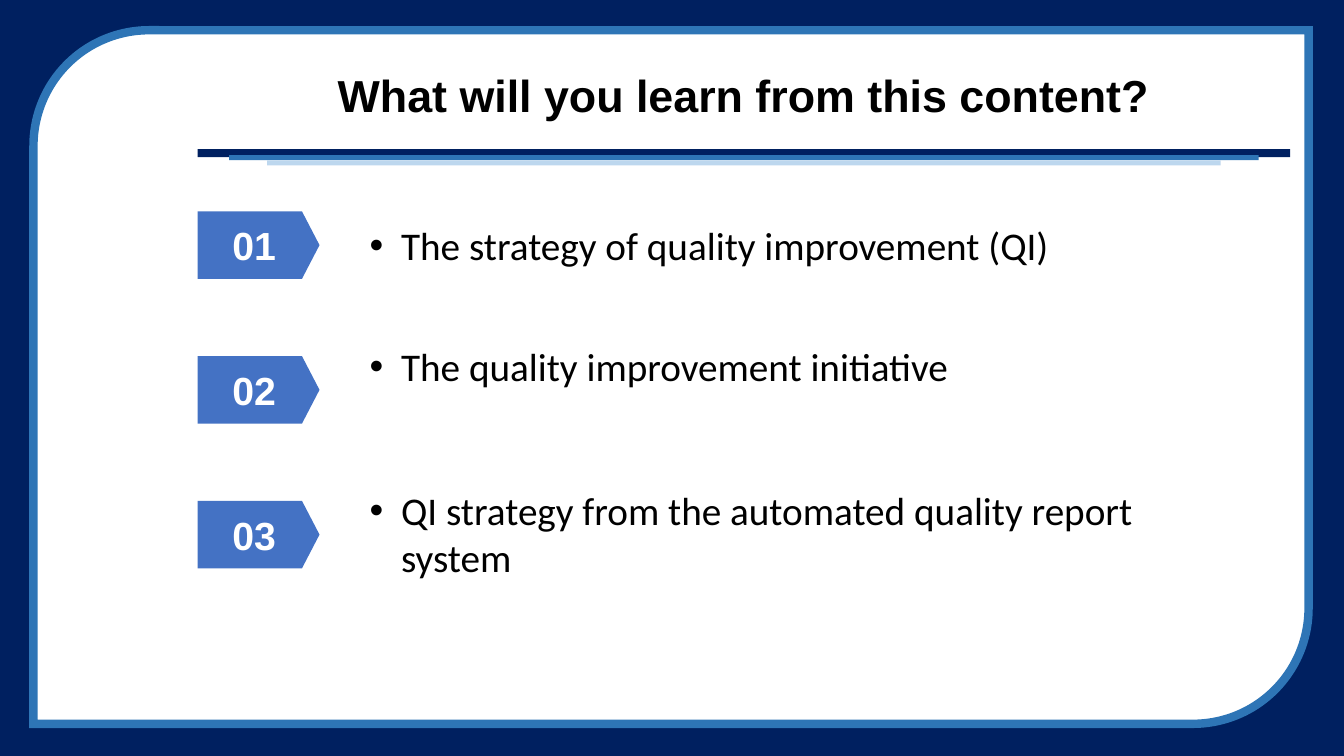
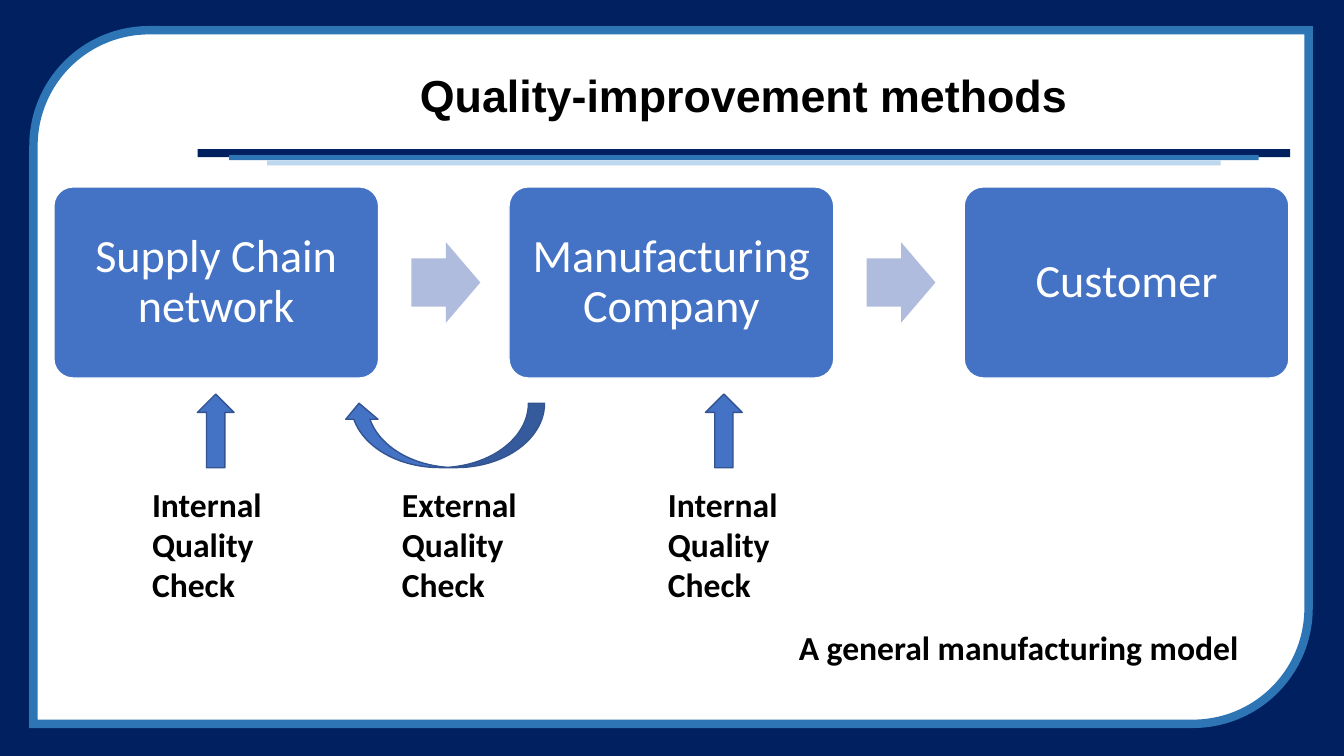
import lxml.etree
import pptx
import pptx.dml.color
import pptx.enum.shapes
import pptx.enum.text
import pptx.oxml.ns
import pptx.util

Pt = pptx.util.Pt
qn = pptx.oxml.ns.qn
SHAPE = pptx.enum.shapes.MSO_SHAPE
ALIGN = pptx.enum.text.PP_ALIGN
ANCHOR = pptx.enum.text.MSO_ANCHOR

NAVY = "002060"
BLUE = "2E75B6"
PALE_BLUE = "BDD7EE"
ACCENT = "4472C4"
ACCENT_EDGE = "325491"
FLOW_ARROW = "B0BCDE"
WHITE = "FFFFFF"
BLACK = "000000"

PAGE_WIDTH, PAGE_HEIGHT = 960, 540
CONTENT_LEFT, CONTENT_WIDTH = 141.1, 780.5


def color(hex_value):
    return pptx.dml.color.RGBColor.from_string(hex_value)


def place(shape, left, top, width, height):
    shape.left, shape.top = Pt(left), Pt(top)
    shape.width, shape.height = Pt(width), Pt(height)


def put_text(shape, text, *, size, font="Calibri", ink=BLACK, bold=False,
             align=ALIGN.LEFT, anchor=ANCHOR.TOP, line_spacing=1.0,
             gaps=(), hanging=0, margin=None):
    """Write one paragraph per line of text; gaps are the spaces before each."""
    frame = shape.text_frame
    frame.word_wrap = True
    frame.auto_size = pptx.enum.text.MSO_AUTO_SIZE.NONE
    frame.vertical_anchor = anchor
    if margin is not None:
        frame.margin_left = frame.margin_right = Pt(margin)
        frame.margin_top = frame.margin_bottom = Pt(margin)
    for index, line in enumerate(text.split("\n")):
        para = frame.add_paragraph() if index else frame.paragraphs[0]
        para.alignment = align
        para.line_spacing = line_spacing
        para.space_before = Pt(gaps[index] if gaps else 0)
        if hanging:
            properties = para._p.get_or_add_pPr()
            properties.set("marL", str(Pt(hanging)))
            properties.set("indent", str(-Pt(hanging)))
        span = para.add_run()
        span.text = line
        span.font.name = font
        span.font.size = Pt(size)
        span.font.bold = bold
        span.font.color.rgb = color(ink)


def add_box(page, kind, left, top, width, height, fill, line=None,
            line_width=1, adjustments=()):
    box = page.shapes.add_shape(kind, Pt(left), Pt(top), Pt(width), Pt(height))
    box.shadow.inherit = False
    box.fill.solid()
    box.fill.fore_color.rgb = color(fill)
    if line:
        box.line.color.rgb = color(line)
        box.line.width = Pt(line_width)
    else:
        box.line.fill.background()
    for index, value in enumerate(adjustments):
        box.adjustments[index] = value
    return box


def add_label(page, left, top, width, height, text):
    label = page.shapes.add_textbox(Pt(left), Pt(top), Pt(width), Pt(height))
    put_text(label, text, size=24, bold=True)


def add_page(deck, layout_index, title):
    page = deck.slides.add_slide(deck.slide_layouts[layout_index])
    put_text(page.shapes.title, title, size=32, font="Arial", bold=True,
             align=ALIGN.CENTER, anchor=ANCHOR.MIDDLE, line_spacing=0.9)
    return page


def set_up_master(deck, page):
    """Draw the frame and title rules on a page, then move them to the master."""
    master = deck.slide_master
    panel = add_box(page, SHAPE.ROUND_2_DIAG_RECTANGLE, 23.9, 21.6, 910.8,
                    495.4, WHITE, BLUE, 6)
    outline = panel.element.spPr.find(qn("a:ln"))
    lxml.etree.SubElement(outline, qn("a:miter"), lim="800000")
    parts = [
        add_box(page, SHAPE.RECTANGLE, 0, 0, PAGE_WIDTH, PAGE_HEIGHT, NAVY),
        panel,
    ]
    for inset, top, height, fill in ((0, 106.5, 5.8, NAVY),
                                     (22.5, 110.8, 3.6, BLUE),
                                     (49.7, 114.5, 3.6, PALE_BLUE)):
        parts.append(add_box(page, SHAPE.RECTANGLE, CONTENT_LEFT + inset, top,
                             CONTENT_WIDTH - 2 * inset, height, fill))
    for index, part in enumerate(parts):
        part.element.nvSpPr.cNvPr.set("id", str(100 + index))
        master.shapes.element.insert(2 + index, part.element)
    place(master.placeholders[0], CONTENT_LEFT, 35.3, CONTENT_WIDTH, 69.8)


def fill_learning_page(page):
    for index in range(3):
        tag = add_box(page, SHAPE.PENTAGON, CONTENT_LEFT, 151 + 103.4 * index,
                      87.1, 48.2, ACCENT, adjustments=(0.26,))
        put_text(tag, f"{index + 1:02d}", size=28, font="Arial", ink=WHITE,
                 bold=True, align=ALIGN.CENTER, anchor=ANCHOR.MIDDLE)
    topics = page.placeholders[1]
    place(topics, 256.8, 154.5, 635, 250)
    put_text(topics, "The strategy of quality improvement (QI)\n"
                     "The quality improvement initiative\n"
                     "QI strategy from the automated quality report system",
             size=28, gaps=(0, 52.6, 69.6), hanging=22.5)


def fill_methods_page(page):
    stages = ("Supply Chain network", "Manufacturing Company", "Customer")
    pitch = 325.1
    for index, stage in enumerate(stages):
        left = 38.5 + pitch * index
        card = add_box(page, SHAPE.ROUNDED_RECTANGLE, left, 133.5, 232, 136.5,
                       ACCENT, WHITE, adjustments=(0.1,))
        put_text(card, stage, size=33, ink=WHITE, align=ALIGN.CENTER,
                 anchor=ANCHOR.MIDDLE, line_spacing=0.9, margin=6)
        if index < len(stages) - 1:
            add_box(page, SHAPE.RIGHT_ARROW, left + 255.4, 173, 49.2, 57.6,
                    FLOW_ARROW, adjustments=(0.6, 0.5))

    for left, scope in ((101.5, "Internal"), (280, "External"),
                        (470, "Internal")):
        add_label(page, left, 342, 110, 94.5, f"{scope}\nQuality\nCheck")
    for left in (141, 504):
        add_box(page, SHAPE.UP_ARROW, left, 281.5, 26.2, 52.6, ACCENT,
                ACCENT_EDGE)
    feedback = add_box(page, SHAPE.CURVED_UP_ARROW, 245, 288, 144, 46, ACCENT,
                       ACCENT_EDGE)
    feedback.element.spPr.find(qn("a:xfrm")).set("flipH", "1")
    add_label(page, 563.5, 444, 345, 36, "A general manufacturing model")


def main():
    deck = pptx.Presentation()
    deck.slide_width, deck.slide_height = Pt(PAGE_WIDTH), Pt(PAGE_HEIGHT)
    learning = add_page(deck, 1, "What will you learn from this content?")
    set_up_master(deck, learning)
    fill_learning_page(learning)
    fill_methods_page(add_page(deck, 5, "Quality-improvement methods"))
    deck.save("out.pptx")


if __name__ == "__main__":
    main()
